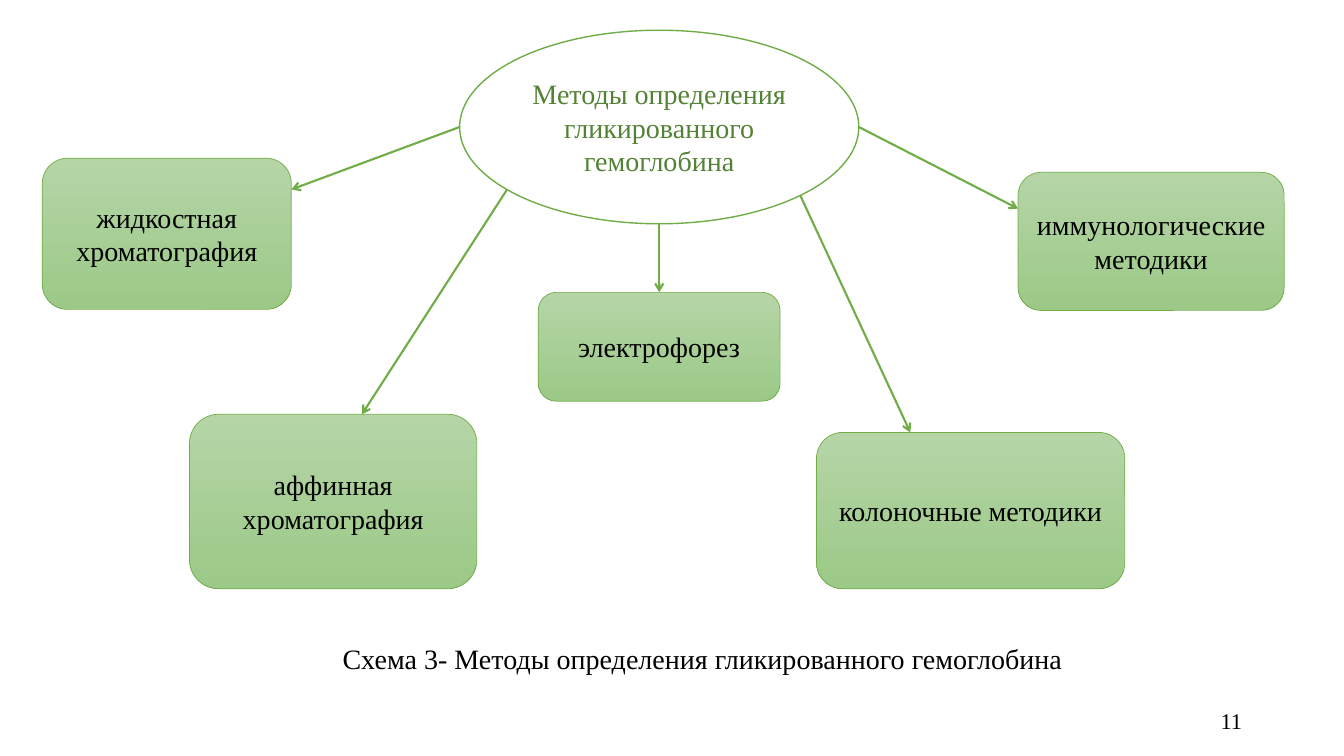
from lxml import etree
from pptx import Presentation
from pptx import util as u
from pptx.dml.color import RGBColor
from pptx.enum import shapes, text
from pptx.oxml import ns

GREEN = RGBColor(0x70, 0xAD, 0x47)
DARK_GREEN = RGBColor(0x54, 0x82, 0x35)
LIGHT_TOP = RGBColor(0xB5, 0xD5, 0xA7)
LIGHT_BOTTOM = RGBColor(0x9C, 0xC9, 0x87)
BLACK = RGBColor(0, 0, 0)
WHITE = RGBColor(255, 255, 255)

prs = Presentation()
prs.slide_width, prs.slide_height = u.Inches(13.33), u.Inches(7.5)
slide = prs.slides.add_slide(prs.slide_layouts[6])


def place(*percents):
    """Turn percentages of the slide's width and height, in turn, into lengths."""
    sides = (prs.slide_width, prs.slide_height) * 2
    return [u.Emu(round(side * share / 100)) for side, share in zip(sides, percents)]


def write(shape, wording, align, size=20, color=BLACK, wrap=True):
    frame = shape.text_frame
    frame.text = wording
    frame.word_wrap = wrap
    frame.vertical_anchor = text.MSO_ANCHOR.MIDDLE
    paragraph = frame.paragraphs[0]
    paragraph.alignment = align
    font = paragraph.runs[0].font
    font.name, font.size, font.color.rgb = "Times New Roman", u.Pt(size), color


# Central topic
topic = slide.shapes.add_shape(shapes.MSO_SHAPE.OVAL, *place(34.2, 4, 29.7, 25.6))
topic.shadow.inherit = False
topic.fill.solid()
topic.fill.fore_color.rgb = WHITE
topic.line.color.rgb, topic.line.width = GREEN, u.Pt(1)
write(topic, "Методы определения гликированного гемоглобина",
      text.PP_ALIGN.CENTER, color=DARK_GREEN)

# Methods: wording, box, arrow start, arrow end (None: middle of the box's top)
methods = [
    ("жидкостная хроматография", (3.15, 20.93, 18.53, 20), (34.2, 16.8), (21.68, 25.07)),
    ("аффинная хроматография", (14.1, 54.8, 21.38, 23.07), (37.73, 25.07), (26.93, 54.8)),
    ("электрофорез", (40.05, 38.67, 18, 14.4), (49.05, 29.6), None),
    ("колоночные методики", (60.75, 57.2, 22.95, 20.67), (59.55, 25.87), (67.73, 57.2)),
    ("иммунологические методики", (75.75, 22.8, 19.8, 18.27), (63.9, 16.8), (75.75, 27.6)),
]
for wording, box, start, end in methods:
    method = slide.shapes.add_shape(shapes.MSO_SHAPE.ROUNDED_RECTANGLE, *place(*box))
    method.shadow.inherit = False
    method.fill.gradient()
    method.fill.gradient_angle = 270
    for stop, color in zip(method.fill.gradient_stops, (LIGHT_TOP, LIGHT_BOTTOM)):
        stop.color.rgb = color
    method.line.color.rgb, method.line.width = GREEN, u.Pt(0.5)
    write(method, wording, text.PP_ALIGN.CENTER)

    # Arrow from the topic to the method
    arrow = slide.shapes.add_connector(
        shapes.MSO_CONNECTOR.STRAIGHT, *place(*start), *place(*(end or start)))
    if end is None:
        arrow.begin_connect(topic, 2)
        arrow.end_connect(method, 0)
        # An ellipse counts eight connection sites; its bottom is number 4
        arrow.element.find(".//" + ns.qn("a:stCxn")).set("idx", "4")
    arrow.line.color.rgb, arrow.line.width = GREEN, u.Pt(1.5)
    etree.SubElement(arrow.line._get_or_add_ln(), ns.qn("a:tailEnd"), type="arrow")
    etree.SubElement(arrow.element.spPr, ns.qn("a:effectLst"))

# Caption
caption = slide.shapes.add_textbox(*place(24.75, 84.13, 55.58, 5.87))
write(caption, "Схема 3- Методы определения гликированного гемоглобина",
      text.PP_ALIGN.LEFT, wrap=False)

# Page number
page_number = slide.shapes.add_textbox(*place(70.65, 92.67, 22.5, 5.33))
write(page_number, "11", text.PP_ALIGN.RIGHT, size=16)

prs.save("out.pptx")
